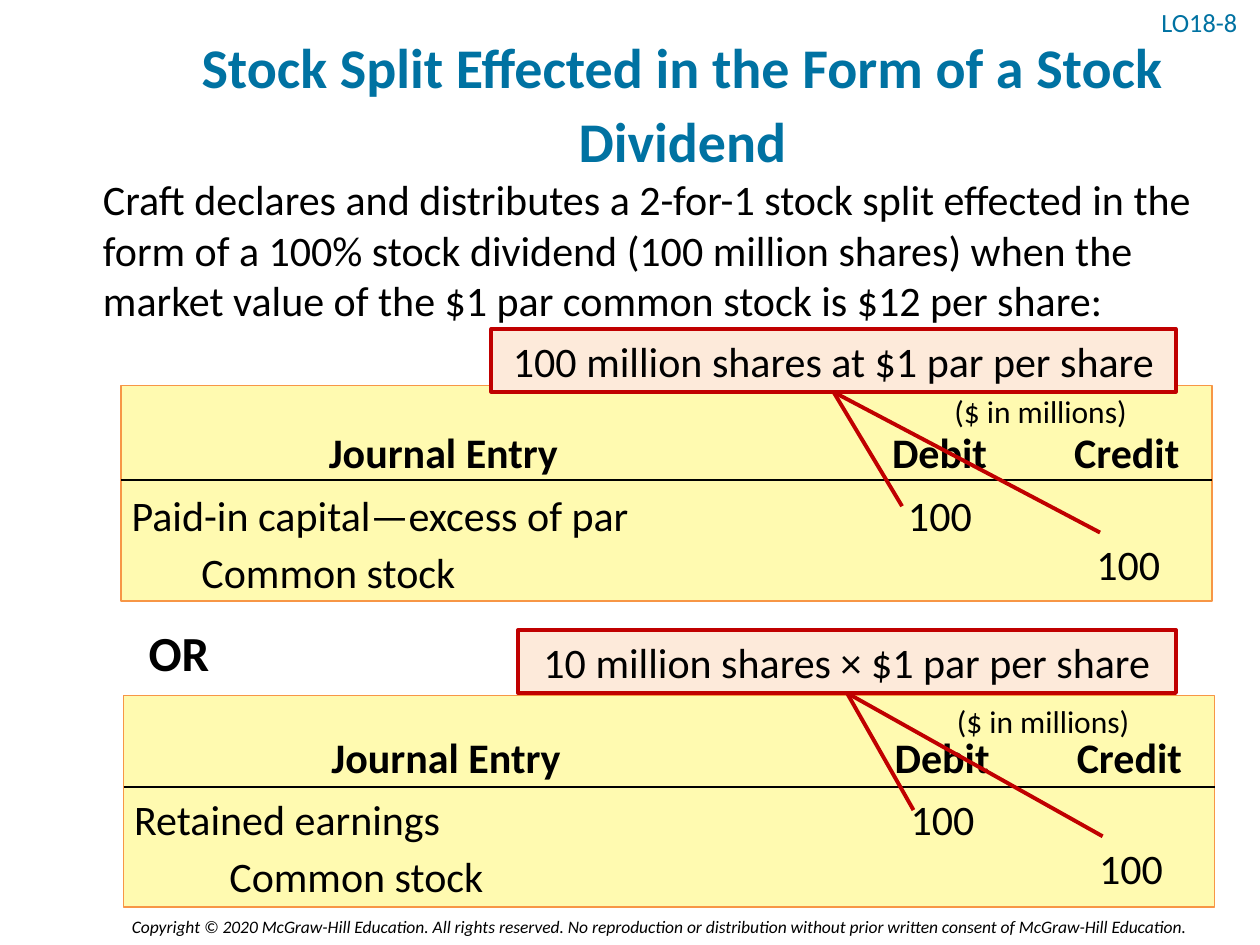
from lxml.etree import SubElement
from pptx import Presentation
from pptx.dml.color import RGBColor
from pptx.enum.shapes import MSO_CONNECTOR as CONNECTOR, MSO_SHAPE as SHAPE
from pptx.enum.text import MSO_ANCHOR as ANCHOR, MSO_AUTO_SIZE as AUTO_SIZE, PP_ALIGN as ALIGN
from pptx.oxml.ns import qn
from pptx.util import Pt

COLORS = {
    "heading": "0072A2",
    "text": "000000",
    "entry": "FFFAB0",
    "entry_line": "F79646",
    "callout": "FDEADA",
    "callout_line": "C00000",
}
ENTRY_WIDTH = 623.5
BOTTOM = 2

ENTRIES = [
    {"left": 69.1, "top": 220.3, "height": 123.1,
     "head": 20, "rule": 54, "row": 56, "account": "Paid-in capital—excess of par",
     "credit_left": 108, "debit_tip": 446.4,
     "callout": "100 million shares at $1 par per share",
     "callout_at": (280.8, 188, 391, 36)},
    {"left": 70.6, "top": 397.4, "height": 121,
     "head": 17, "rule": 52.5, "row": 52.5, "account": "Retained earnings",
     "credit_left": 124, "debit_tip": 451.4,
     "callout": "10 million shares × $1 par per share",
     "callout_at": (296, 360, 376, 36)},
]


def rgb(name):
    return RGBColor.from_string(COLORS[name])


def pts(*values):
    return [Pt(v) for v in values]


def write(tf, text, align=ALIGN.LEFT, color="text", **font):
    """Put one formatted run into a text frame."""
    tf.word_wrap = True
    p = tf.paragraphs[0]
    p.alignment = align
    r = p.add_run()
    r.text = text
    r.font.color.rgb = rgb(color)
    values = {"name": "Calibri", "size": 24, **font}
    values["size"] = Pt(values["size"])
    for name, value in values.items():
        setattr(r.font, name, value)
    return p


def add_text(slide, at, text, **fmt):
    sp = slide.shapes.add_textbox(*pts(*at))
    write(sp.text_frame, text, **fmt)


def add_box(slide, at, fill, line, width):
    sp = slide.shapes.add_shape(SHAPE.RECTANGLE, *pts(*at))
    sp.shadow.inherit = False
    sp.fill.solid()
    sp.fill.fore_color.rgb = rgb(fill)
    sp.line.color.rgb = rgb(line)
    sp.line.width = Pt(width)
    return sp


def add_line(slide, start, end, color, width):
    line = slide.shapes.add_connector(CONNECTOR.STRAIGHT, *pts(*start, *end))
    line.line.color.rgb = rgb(color)
    line.line.width = Pt(width)
    SubElement(line._element.spPr, qn("a:effectLst"))
    return line


def add_title(slide, text):
    sp = slide.shapes.title
    sp.left, sp.top, sp.width, sp.height = pts(60, 0, 660, 114)
    tf = sp.text_frame
    tf.auto_size = AUTO_SIZE.NONE
    tf.vertical_anchor = ANCHOR.MIDDLE
    p = write(tf, text, align=ALIGN.CENTER, color="heading", size=32, bold=True)
    p.line_spacing = 1.1


def add_callout(slide, at, text, tips):
    """Add a boxed note with a line from each tip to its bottom edge."""
    sp = add_box(slide, at, "callout", "callout_line", 2.25)
    sp.text_frame.vertical_anchor = ANCHOR.MIDDLE
    write(sp.text_frame, text, align=ALIGN.CENTER)
    left, top, width, height = at
    for tip in tips:
        line = add_line(slide, tip, (left + width / 2, top + height), "callout_line", 2.25)
        line.end_connect(sp, BOTTOM)


def add_entry(slide, entry):
    """Add a journal entry panel and the callout that explains its amounts."""
    left, top = entry["left"], entry["top"]
    head, rule, row = (top + entry[key] for key in ("head", "rule", "row"))
    add_box(slide, (left, top, ENTRY_WIDTH, entry["height"]), "entry", "entry_line", 1)
    add_line(slide, (left, rule), (left + ENTRY_WIDTH, rule), "text", 1)

    for text, x, width in (("Journal Entry", 0, 368.6), ("Debit", 417, 101.5),
                           ("Credit", 524, 101.5)):
        add_text(slide, (left + x, head, width, 36), text, align=ALIGN.CENTER, bold=True)
    add_text(slide, (left + 435, top, 181, 29), "($ in millions)", align=ALIGN.CENTER, size=18)

    add_text(slide, (left - 1, row, 446, 32), entry["account"])
    add_text(slide, (left + 422, row, 92, 32), "100", align=ALIGN.CENTER)
    add_text(slide, (entry["credit_left"], row + 32.5, 298, 32), "Common stock")
    add_text(slide, (left + 517, row + 28, 84, 32), "100", align=ALIGN.RIGHT)

    tips = [(left + 559.5, row + 28), (left + entry["debit_tip"], row + 13)]
    add_callout(slide, entry["callout_at"], entry["callout"], tips)


def main():
    prs = Presentation()
    prs.slide_width, prs.slide_height = pts(720, 540)
    slide = prs.slides.add_slide(prs.slide_layouts[5])

    add_text(slide, (32.4, 520, 654.5, 19.4),
             "Copyright © 2020 McGraw-Hill Education. All rights reserved. No reproduction or "
             "distribution without prior written consent of McGraw-Hill Education. ",
             align=ALIGN.RIGHT, size=10, italic=True)
    add_text(slide, (656.6, 0, 70.5, 25), "LO18-8", color="heading", size=15)
    add_title(slide, "Stock Split Effected in the Form of a Stock Dividend")
    add_text(slide, (51.8, 95.8, 664, 94.3),
             "Craft declares and distributes a 2-for-1 stock split effected in the form of a "
             "100% stock dividend (100 million shares) when the market value of the $1 par "
             "common stock is $12 per share:")
    for entry in ENTRIES:
        add_entry(slide, entry)
    add_text(slide, (77.8, 352, 132, 41), "OR", size=28, bold=True)

    prs.save("out.pptx")


if __name__ == "__main__":
    main()
